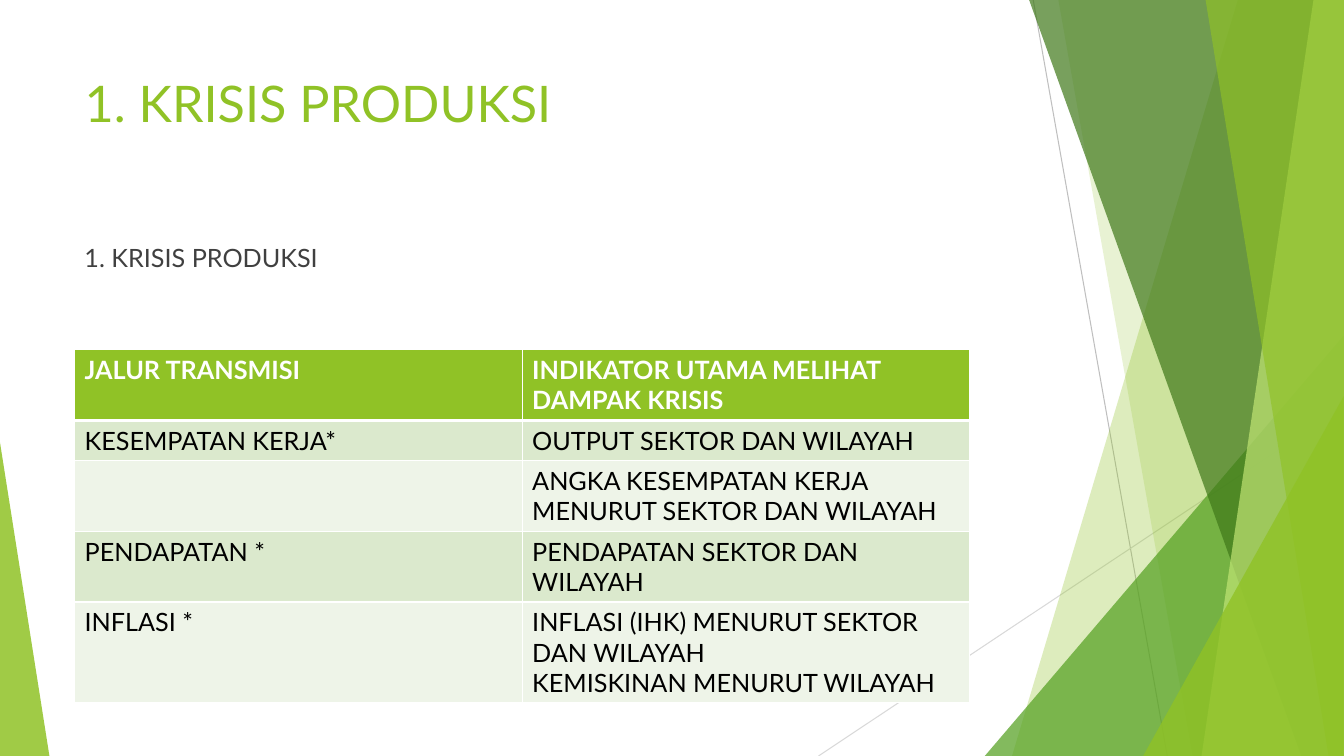
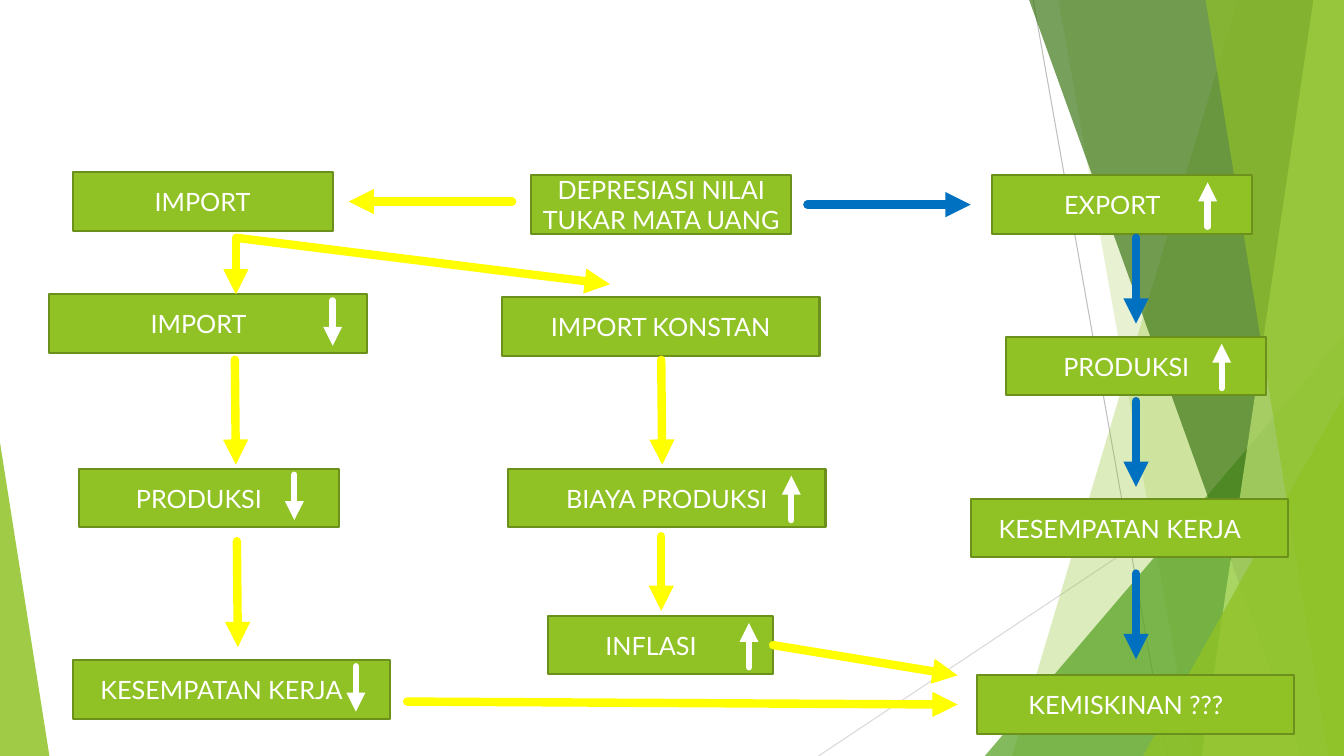
from dataclasses import dataclass

from lxml.etree import SubElement
from pptx import Presentation
from pptx.dml.color import RGBColor
from pptx.enum.shapes import MSO_CONNECTOR, MSO_SHAPE
from pptx.enum.text import MSO_ANCHOR, MSO_AUTO_SIZE, PP_ALIGN
from pptx.oxml.ns import qn
from pptx.util import Inches, Pt

COLS, ROWS = 133.33, 75  # slide grid
CELL = Inches(0.1)
TITLE_ONLY, BLANK = 5, 6


@dataclass(frozen=True)
class Theme:
    font: str = "Lato"
    title_size: int = 36
    text_size: int = 18
    green: str = "90C226"
    mid_green: str = "54A021"
    dark_green: str = "3F7819"
    pale_green: str = "C0E474"
    outline: str = "6B901C"
    row_dark: str = "DBE9CD"
    row_light: str = "EEF4E8"
    white: str = "FFFFFF"
    black: str = "000000"
    body: str = "404040"
    grey: str = "BFBFBF"
    light_grey: str = "D9D9D9"
    blue: str = "0070C0"
    yellow: str = "FFFF00"


THEME = Theme()


@dataclass(frozen=True)
class Box:
    """A region in grid columns and rows."""
    left: float
    top: float
    width: float
    height: float

    def point(self, col, row):
        return round((self.left + col) * CELL), round((self.top + row) * CELL)

    def inner(self, col, row, width, height):
        return Box(self.left + col, self.top + row, width, height)

    def emu(self):
        return [round(n * CELL) for n in (self.left, self.top, self.width, self.height)]


PAGE = Box(0, 0, COLS, ROWS)


# Shared helpers
def rgb(color):
    return RGBColor.from_string(color)


def add_run(paragraph, text, color, size=THEME.text_size, bold=False):
    run = paragraph.add_run()
    run.text = text
    run.font.name, run.font.size, run.font.bold = THEME.font, Pt(size), bold
    run.font.color.rgb = rgb(color)


def paint(shape, color, opacity=100):
    shape.shadow.inherit = False
    shape.line.fill.background()
    shape.fill.solid()
    shape.fill.fore_color.rgb = rgb(color)
    if opacity < 100:
        tint = shape._element.spPr.find(qn("a:solidFill"))[0]
        SubElement(tint, qn("a:alpha"), val=str(opacity * 1000))


def add_line(shapes, box, start, end, color, width, arrow=False):
    line = shapes.add_connector(MSO_CONNECTOR.STRAIGHT, *box.point(*start), *box.point(*end))
    line.line.color.rgb = rgb(color)
    line.line.width = Pt(width)
    if arrow:
        stroke = line.line._get_or_add_ln()
        stroke.set("cap", "rnd")
        SubElement(stroke, qn("a:round"))
        SubElement(stroke, qn("a:tailEnd"), type="triangle")
    SubElement(line._element.spPr, qn("a:effectLst"))
    return line


# Faceted background, kept on the slide master
def add_band(shapes, box, top_col, bottom_col, color, opacity):
    builder = shapes.build_freeform(*box.point(top_col, 0), scale=1.0)
    builder.add_line_segments([box.point(box.width, 0), box.point(box.width, box.height),
                               box.point(bottom_col, box.height)], close=True)
    band = builder.convert_to_shape()
    paint(band, color, opacity)
    return band


def add_corner(shapes, box, apex, color, opacity):
    corner = shapes.add_shape(MSO_SHAPE.ISOSCELES_TRIANGLE, *box.emu())
    corner.adjustments[0] = apex
    paint(corner, color, opacity)
    return corner


def draw_facets(slide, master, box):
    shapes, t = slide.shapes, THEME
    facets = [
        add_line(shapes, box, (102.5, 0), (115.8, box.height), t.grey, 0.75),
        add_line(shapes, box, (box.width, 40.3), (81.2, box.height), t.light_grey, 0.75),
        add_band(shapes, box, 122.8, 100.4, t.green, 30),
        add_band(shapes, box, 105, 118.3, t.green, 20),
        add_corner(shapes, box.inner(97.7, 33.3, 35.6, 41.7), 1, t.mid_green, 72),
        add_band(shapes, box, 102.1, 129.1, t.dark_green, 70),
        add_band(shapes, box, 130.3, 119.2, t.pale_green, 70),
        add_band(shapes, box, 119.6, 131.8, t.green, 65),
        add_corner(shapes, box.inner(113.4, 39.3, 19.9, 35.7), 1, t.green, 80),
        add_corner(shapes, box.inner(0, 43.9, 4.9, 31.1), 0, t.green, 85),
    ]
    tree = master.shapes._spTree
    for index, facet in enumerate(facets):
        element = facet._element
        element.xpath(".//p:cNvPr")[0].set("id", str(100 + index))
        tree.insert(2 + index, element)


# Table slide
def set_title(slide, box, text):
    title = slide.shapes.title
    title.left, title.top, title.width, title.height = box.emu()
    frame = title.text_frame
    frame.auto_size, frame.vertical_anchor = MSO_AUTO_SIZE.NONE, MSO_ANCHOR.TOP
    frame.paragraphs[0].alignment = PP_ALIGN.LEFT
    add_run(frame.paragraphs[0], text, THEME.green, THEME.title_size)


def add_lead(slide, box, text):
    frame = slide.shapes.add_textbox(*box.emu()).text_frame
    frame.word_wrap = True
    add_run(frame.paragraphs[0], text, THEME.body)


def style_cell(cell, fill, bottom_width):
    properties = cell._tc.get_or_add_tcPr()
    for side, width in (("L", 1), ("R", 1), ("T", 1), ("B", bottom_width)):
        border = SubElement(properties, qn(f"a:ln{side}"), w=str(Pt(width)))
        SubElement(SubElement(border, qn("a:solidFill")), qn("a:srgbClr"), val=THEME.white)
    cell.fill.solid()
    cell.fill.fore_color.rgb = rgb(fill)


def add_indicators(slide, box, rows):
    """Rows are (height, cells); each cell is a list of paragraphs."""
    columns = len(rows[0][1])
    table = slide.shapes.add_table(len(rows), columns, *box.emu()).table
    table.horz_banding = False
    for column in table.columns:
        column.width = round(box.width * CELL / columns)
    for r, (height, cells) in enumerate(rows):
        table.rows[r].height = round(height * CELL)
        header = r == 0
        fill = THEME.green if header else (THEME.row_light, THEME.row_dark)[r % 2]
        for c, lines in enumerate(cells):
            cell = table.cell(r, c)
            style_cell(cell, fill, 3 if header else 1)
            frame = cell.text_frame
            for i, line in enumerate(lines):
                paragraph = frame.add_paragraph() if i else frame.paragraphs[0]
                add_run(paragraph, line, THEME.white if header else THEME.black, bold=header)


def build_production(slide, box):
    set_title(slide, box.inner(7.4, 6.7, 94, 12.1), "1. KRISIS PRODUKSI")
    add_lead(slide, box.inner(7.4, 23.6, 94, 5), "1. KRISIS PRODUKSI")
    rows = [
        (7, (["JALUR TRANSMISI"], ["INDIKATOR UTAMA MELIHAT DAMPAK KRISIS"])),
        (4, (["KESEMPATAN KERJA*"], ["OUTPUT SEKTOR DAN WILAYAH"])),
        (7, ([], ["ANGKA KESEMPATAN KERJA MENURUT SEKTOR DAN WILAYAH"])),
        (7, (["PENDAPATAN *"], ["PENDAPATAN SEKTOR DAN WILAYAH"])),
        (10, (["INFLASI *"], ["INFLASI (IHK) MENURUT SEKTOR DAN WILAYAH",
                              "KEMISKINAN MENURUT WILAYAH"])),
    ]
    add_indicators(slide, box.inner(7.4, 34.7, 88.8, 35), rows)


# Flow slide: node width and distance of its trend arrow from the right edge
NARROW, WIDE, SMALL = (25.8, 4.4), (31.5, 3.4), (22.3, 2.4)
NODE_HEIGHT = 5.8
UP, DOWN = (5.1, 0.7), (0.6, 5.1)


def add_node(slide, box, label, trend, trend_inset, shifted):
    node = slide.shapes.add_shape(MSO_SHAPE.RECTANGLE, *box.emu())
    paint(node, THEME.green)
    node.line.color.rgb = rgb(THEME.outline)
    node.line.width = Pt(1.5)
    frame = node.text_frame
    frame.word_wrap, frame.vertical_anchor = True, MSO_ANCHOR.MIDDLE
    if shifted:
        frame.margin_right = Inches(0.29)
    frame.paragraphs[0].alignment = PP_ALIGN.CENTER
    add_run(frame.paragraphs[0], label, THEME.white)
    if trend:
        col = box.width - trend_inset
        add_line(slide.shapes, box, (col, trend[0]), (col, trend[1]), THEME.white, 4.5, True)


def build_depreciation(slide, box):
    # label, column, row, size, trend, text shifted left
    nodes = [
        ("IMPORT", 2.2, 0.1, NARROW, None, False),
        ("DEPRESIASI NILAI TUKAR MATA UANG", 47.7, 0.4, NARROW, None, False),
        ("EXPORT", 93.4, 0.4, NARROW, UP, True),
        ("PRODUKSI", 94.8, 16.4, NARROW, UP, True),
        ("KESEMPATAN KERJA", 91.3, 32.5, WIDE, None, True),
        ("IMPORT KONSTAN", 44.8, 12.5, WIDE, None, False),
        ("BIAYA PRODUKSI", 45.4, 29.5, WIDE, UP, False),
        ("INFLASI", 49.4, 44.1, SMALL, UP, True),
        ("IMPORT", -0.1, 12.2, WIDE, DOWN, True),
        ("PRODUKSI", 2.8, 29.5, NARROW, DOWN, True),
        ("KESEMPATAN KERJA", 2.2, 48.5, WIDE, DOWN, True),
        ("KEMISKINAN ???", 91.9, 50, WIDE, None, True),
    ]
    for label, col, row, (width, inset), trend, shifted in nodes:
        add_node(slide, box.inner(col, row, width, NODE_HEIGHT), label, trend, inset, shifted)

    # Export path, then import path
    export_col, export_step = 107.7, 8.5
    export_path = [((75.1, 3.3), (91.3, 3.3))]
    export_path += [((export_col, row), (export_col, row + export_step))
                    for row in (6.6, 22.8, 39.9)]
    import_path = [
        ((45.8, 3), (29.6, 3)),
        ((18.4, 6.6), (18.4, 12.2)),
        ((18.5, 6.6), (55.5, 11.2)),
        ((18.3, 18.7), (18.4, 29.1)),
        ((18.5, 36.7), (18.6, 47.2)),
        ((35.4, 52.6), (90, 52.9)),
        ((60.6, 18.7), (60.7, 29.1)),
        ((60.6, 36.2), (60.6, 43.6)),
        ((71.7, 47), (90, 50)),
    ]
    for color, links in ((THEME.blue, export_path), (THEME.yellow, import_path)):
        for start, end in links:
            add_line(slide.shapes, box, start, end, color, 6, True)


def main():
    deck = Presentation()
    deck.slide_width, deck.slide_height = PAGE.emu()[2:]
    production = deck.slides.add_slide(deck.slide_layouts[TITLE_ONLY])
    draw_facets(production, deck.slide_master, PAGE)
    build_production(production, PAGE)
    depreciation = deck.slides.add_slide(deck.slide_layouts[BLANK])
    build_depreciation(depreciation, PAGE.inner(5, 17, 123.5, 56))
    deck.save("out.pptx")


if __name__ == "__main__":
    main()
